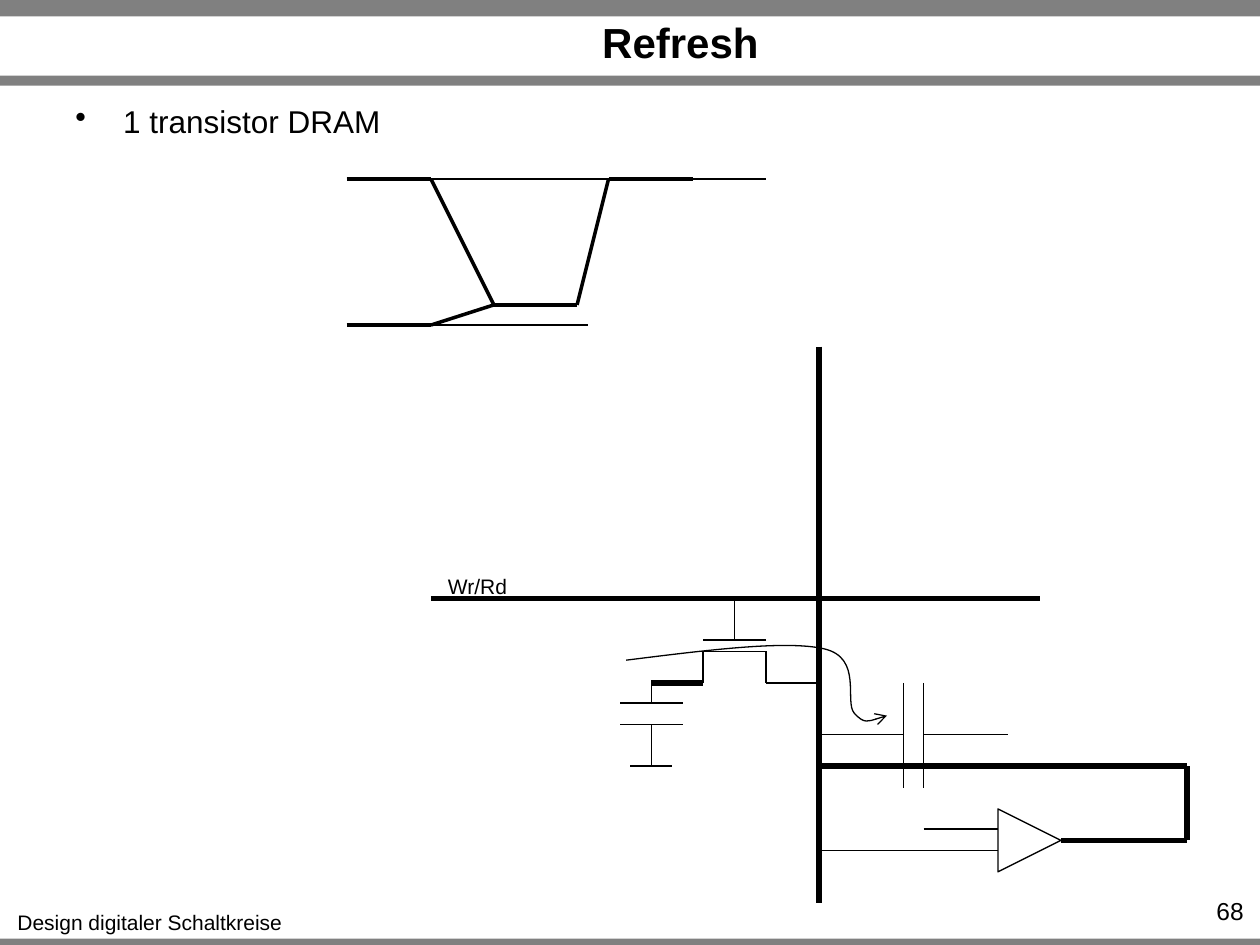
from lxml.etree import SubElement
from pptx import Presentation
from pptx.dml.color import RGBColor
from pptx.enum.shapes import MSO_CONNECTOR, MSO_SHAPE
from pptx.enum.text import MSO_ANCHOR, PP_ALIGN
from pptx.oxml.ns import qn
from pptx.util import Inches, Pt

COLORS = {"black": "000000", "bar": "808080"}
BLACK = RGBColor.from_string(COLORS["black"])
THIN, MEDIUM, THICK = 0.75, 2, 3

prs = Presentation()
prs.slide_width, prs.slide_height = Inches(10), Inches(7.5)
s = prs.slides.add_slide(prs.slide_layouts[6])


def add_text(text, box, size=12, bold=False, align=PP_ALIGN.CENTER,
             anchor=MSO_ANCHOR.TOP, wrap=True, bullet=None):
    tf = s.shapes.add_textbox(*map(Inches, box)).text_frame
    tf.word_wrap = wrap
    tf.vertical_anchor = anchor
    p = tf.paragraphs[0]
    p.alignment = align
    if bullet:
        pPr = p._p.get_or_add_pPr()
        pPr.set("marL", str(Inches(0.38)))
        pPr.set("indent", str(Inches(-0.38)))
        SubElement(pPr, qn("a:buChar"), char=bullet)
    r = p.add_run()
    r.text = text
    r.font.name, r.font.size, r.font.bold = "Arial", Pt(size), bold
    r.font.color.rgb = BLACK


def add_line(x1, y1, x2, y2, width=THIN):
    c = s.shapes.add_connector(MSO_CONNECTOR.STRAIGHT, *map(Inches, (x1, y1, x2, y2)))
    c.line.color.rgb = BLACK
    c.line.width = Pt(width)
    SubElement(c._element.spPr, qn("a:effectLst"))
    return c


for top, height in [(7.45, 0.05), (0, 0.13), (0.6, 0.08)]:
    bar = s.shapes.add_shape(MSO_SHAPE.RECTANGLE, 0, Inches(top), prs.slide_width, Inches(height))
    bar.shadow.inherit = False
    bar.fill.solid()
    bar.fill.fore_color.rgb = RGBColor.from_string(COLORS["bar"])
    bar.line.fill.background()

add_text("Design digitaler Schaltkreise", (0.03, 7.17, 2.32, 0.3), wrap=False)
add_text("Refresh", (1.3, 0.14, 8.2, 0.38), size=24, bold=True, anchor=MSO_ANCHOR.MIDDLE)
add_text("1 transistor DRAM", (0.5, 0.76, 9, 0.66), size=18, align=PP_ALIGN.LEFT, bullet="•")
add_text("68", (9.1, 7.06, 0.87, 0.24), size=14, align=PP_ALIGN.RIGHT)
add_text("Wr/Rd", (3.45, 4.5, 0.68, 0.3), wrap=False)

transistor = [
    (6.08, 5.17, 5.58, 5.17),
    (6.08, 5.17, 6.08, 5.42),
    (5.58, 5.17, 5.58, 5.42),
    (6.08, 5.08, 5.58, 5.08),
    (6.5, 5.42, 6.08, 5.42),
    (5.83, 5.08, 5.83, 4.75),
]
bit_line_capacitor = [
    (6.5, 5.83, 7.17, 5.83),
    (7.17, 5.42, 7.17, 6.25),
    (7.33, 5.42, 7.33, 6.25),
    (7.33, 5.83, 8, 5.83),
]
for part in (transistor, bit_line_capacitor):
    s.shapes.add_group_shape([add_line(*ends) for ends in part])

storage_capacitor = [
    (5.17, 5.42, 5.17, 5.58),
    (5.42, 5.58, 4.92, 5.58),
    (5.42, 5.75, 4.92, 5.75),
    (5.17, 5.75, 5.17, 6.08),
    (5.33, 6.08, 5, 6.08),
]
signal_levels = [(2.75, 1.42, 6.08, 1.42), (2.83, 2.58, 4.67, 2.58)]
amplifier_inputs = [(7.33, 6.58, 7.92, 6.58), (6.5, 6.75, 7.92, 6.75)]
for ends in storage_capacitor + signal_levels + amplifier_inputs:
    add_line(*ends)

low_trace = [(2.75, 2.58), (3.42, 2.58), (3.92, 2.42)]
high_trace = [(2.75, 1.42), (3.42, 1.42), (3.92, 2.42), (4.58, 2.42), (4.83, 1.42), (5.5, 1.42)]
feedback = [(8.42, 6.67), (9.42, 6.67), (9.42, 6.08), (6.5, 6.08)]
word_line = [(3.42, 4.75), (8.25, 4.75)]
bit_line = [(6.5, 2.75), (6.5, 7.17)]
cell_node = [(5.17, 5.42), (5.58, 5.42)]
for points, width in [(low_trace, MEDIUM), (high_trace, MEDIUM), (feedback, THICK),
                      (word_line, THICK), (bit_line, THICK), (cell_node, THICK)]:
    for start, end in zip(points, points[1:]):
        add_line(*start, *end, width)

amplifier = s.shapes.add_shape(MSO_SHAPE.ISOSCELES_TRIANGLE, *map(Inches, (7.92, 6.42, 0.5, 0.5)))
amplifier.rotation = 90

charge_flow = [
    (4.97, 5.24), (5.61, 5.16), (6.24, 5.08), (6.54, 5.15), (6.85, 5.22),
    (6.7, 5.57), (6.78, 5.66), (6.86, 5.75), (6.95, 5.71), (7.04, 5.68),
]
builder = s.shapes.build_freeform(*charge_flow[0], scale=Inches(1))
builder = s.shapes.build_freeform(*[Inches(v) for v in charge_flow[0]])
builder.add_line_segments([(Inches(x), Inches(y)) for x, y in charge_flow[1:]], close=False)
arrow = builder.convert_to_shape()

for sp in (amplifier, arrow):
    sp.shadow.inherit = False
    sp.fill.background()
    sp.line.color.rgb = BLACK
    sp.line.width = Pt(THIN)

segments = list(arrow._element.iter(qn("a:lnTo")))
outline = segments[0].getparent()
for i in range(0, len(segments), 3):
    curve = SubElement(outline, qn("a:cubicBezTo"))
    for segment in segments[i:i + 3]:
        curve.append(segment[0])
        outline.remove(segment)
SubElement(arrow.line._get_or_add_ln(), qn("a:tailEnd"), type="arrow")

prs.save("out.pptx")
